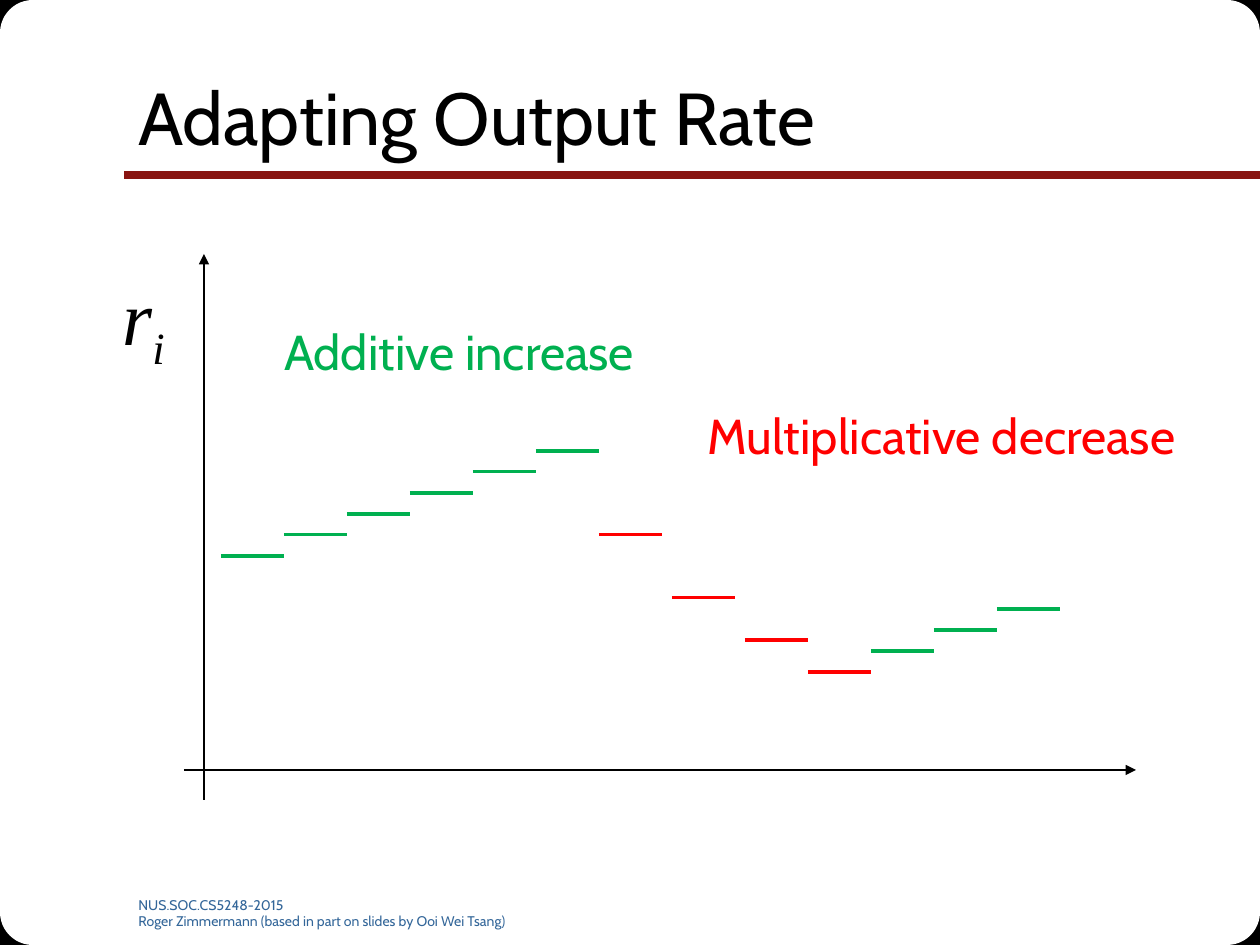
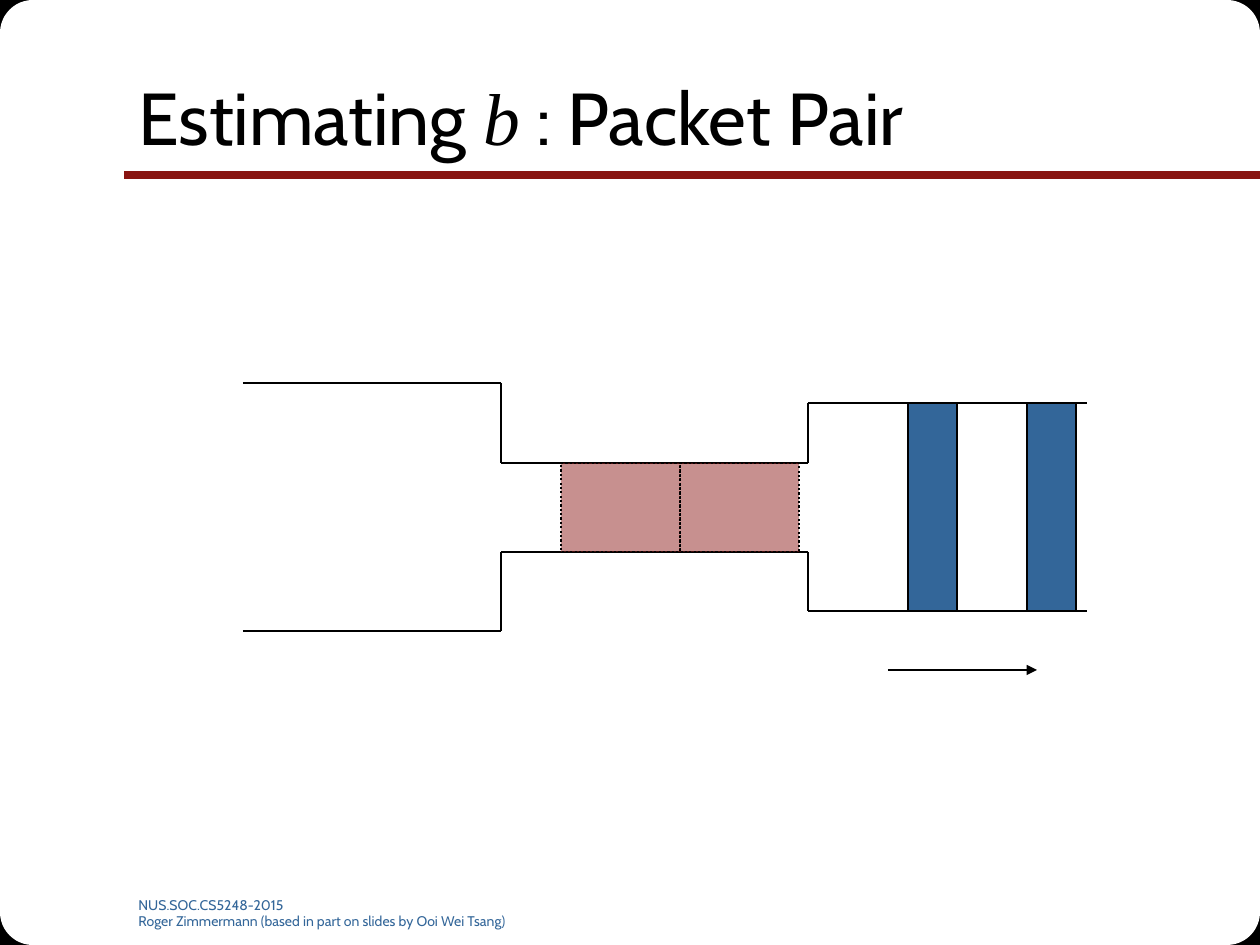
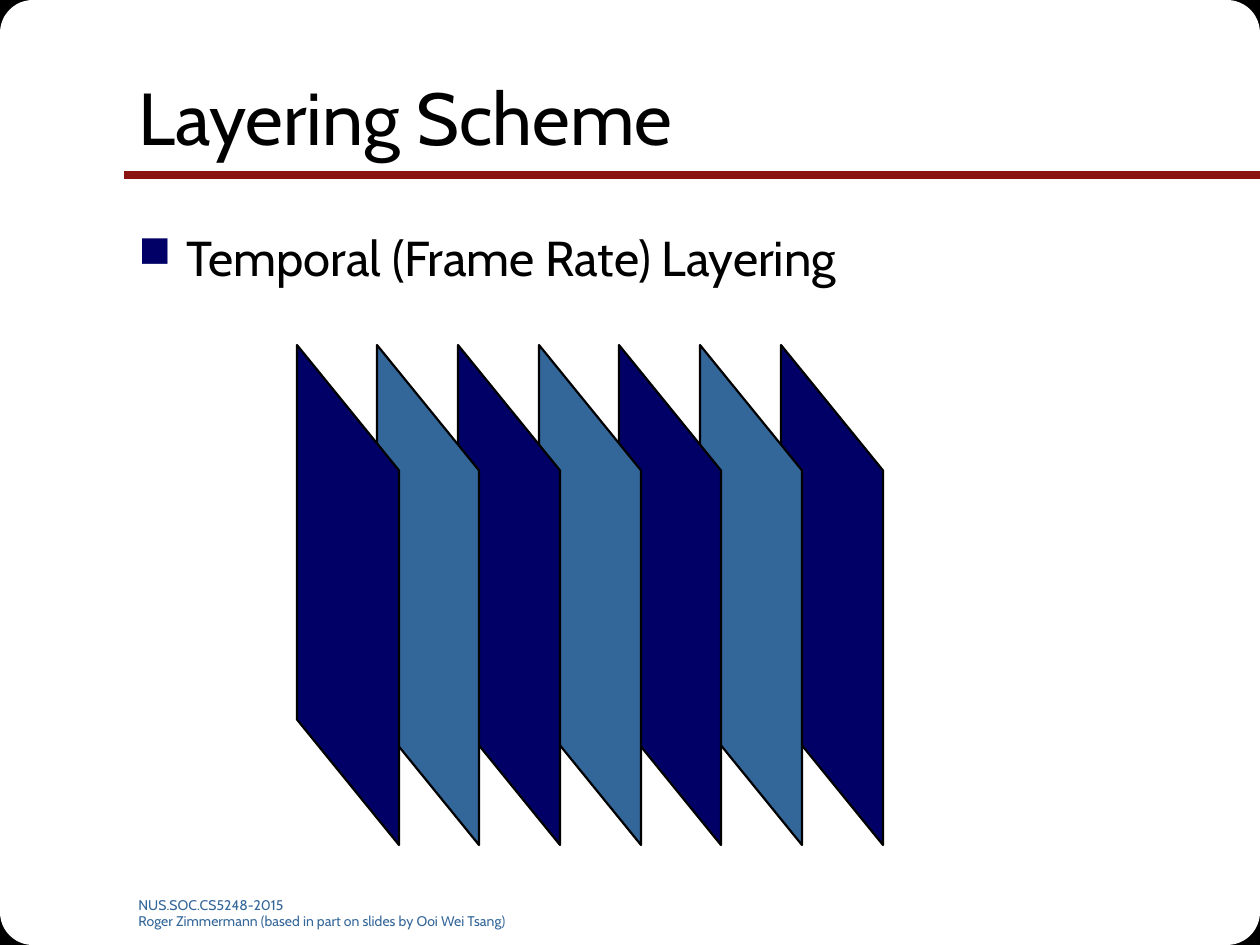
import pptx
import pptx.dml.color
import pptx.enum.dml
import pptx.enum.shapes
import pptx.enum.text
import pptx.oxml.ns
import pptx.util
from lxml import etree

SCALE = 914400 / 126  # EMU in one px
WIDE, HIGH = 1260, 945

BLACK, WHITE = "000000", "FFFFFF"
MAROON, NAVY, BLUE = "891411", "000066", "336699"
GREEN, RED = "00B050", "FF0000"
SANS, SERIF = "Cabin", "Times New Roman"
FOOT = ["NUS.SOC.CS5248-2015",
        "Roger Zimmermann (based in part on slides by Ooi Wei Tsang)"]

KIND = pptx.enum.shapes.MSO_SHAPE
ALIGN = pptx.enum.text.PP_ALIGN
ANCHOR = pptx.enum.text.MSO_ANCHOR
DOTS = pptx.enum.dml.MSO_LINE.ROUND_DOT


def px(num):
    return pptx.util.Emu(round(num * SCALE))


def color(code):
    return pptx.dml.color.RGBColor.from_string(code)


def sub(node, tag, **attrs):
    return etree.SubElement(node, pptx.oxml.ns.qn(tag), **attrs)


# Elements

def stroke(line, code, size):
    line.color.rgb = color(code)
    line.width = pptx.util.Pt(size)


def shape(slide, kind, left, top, wide, high, fill, edge=BLACK, size=1.25):
    item = slide.shapes.add_shape(kind, px(left), px(top), px(wide), px(high))
    item.shadow.inherit = False
    item.fill.solid()
    item.fill.fore_color.rgb = color(fill)
    if edge:
        stroke(item.line, edge, size)
    else:
        item.line.fill.background()
    return item


def line(slide, start, end, code=BLACK, size=1.25, arrow=False):
    item = slide.shapes.add_connector(
        pptx.enum.shapes.MSO_CONNECTOR.STRAIGHT,
        px(start[0]), px(start[1]), px(end[0]), px(end[1]))
    stroke(item.line, code, size)
    if arrow:
        sub(item.line._get_or_add_ln(), "a:tailEnd", type="triangle")
    sub(item._element.spPr, "a:effectLst")


def trace(slide, points):
    for start, end in zip(points, points[1:]):
        line(slide, start, end)


def run(para, words, size, code=BLACK, font=SANS, italic=False, base=0):
    part = para.add_run()
    part.text = words
    part.font.size = pptx.util.Pt(size)
    part.font.name = font
    part.font.italic = italic
    part.font.color.rgb = color(code)
    if base:
        part.font._element.set("baseline", str(base * 1000))


def box(slide, left, top, wide, high, wrap=True):
    frame = slide.shapes.add_textbox(
        px(left), px(top), px(wide), px(high)).text_frame
    frame.word_wrap = wrap
    return frame


def label(slide, left, top, wide, high):
    para = box(slide, left, top, wide, high, wrap=False).paragraphs[0]
    para.alignment = ALIGN.CENTER
    return para


def bullet(para, indent):
    props = para._p.get_or_add_pPr()
    props.set("marL", str(px(indent)))
    props.set("indent", str(-px(indent)))
    sub(sub(props, "a:buClr"), "a:srgbClr", val=NAVY)
    sub(props, "a:buSzPct", val="90000")
    sub(props, "a:buChar", char="■")


# Shared look: rounded black corners, rule, footer, title

def corners(slide, kind, side, fill, edge):
    for top in (0, HIGH - side):
        for left in (0, WIDE - side):
            item = shape(slide, kind, left, top, side, side, fill, edge, 0.75)
            if kind == KIND.ROUNDED_RECTANGLE:
                item.adjustments[0] = 0.17


def start(deck):
    slide = deck.slides.add_slide(deck.slide_layouts[6])
    corners(slide, KIND.RECTANGLE, 55, BLACK, BLACK)
    corners(slide, KIND.ROUNDED_RECTANGLE, 193, WHITE, None)
    line(slide, (WIDE, 175), (124, 175), MAROON, 4.5)
    foot = box(slide, 126, 890, 451, 35)
    run(foot.paragraphs[0], FOOT[0], 8, BLUE)
    run(foot.add_paragraph(), FOOT[1], 8, BLUE)
    head = box(slide, 126, 38, 1071, 157)
    head.vertical_anchor = ANCHOR.MIDDLE
    return slide, head.paragraphs[0]


# Slides

def rate(deck):
    slide, title = start(deck)
    run(title, "Adapting Output Rate", 42)

    # Axes
    line(slide, (184, 770), (1136, 770), arrow=True)
    line(slide, (204, 800), (204, 254), arrow=True)

    # Rate steps
    step, rise = 63, 21
    grow = [(221 + step * i, 556 - rise * i) for i in range(6)]
    drop = [(599, 535), (672, 598), (745, 640), (808, 672)]
    again = [(871 + step * i, 651 - rise * i) for i in range(3)]
    for group, code in ((grow, GREEN), (drop, RED), (again, GREEN)):
        for left, top in group:
            line(slide, (left, top), (left + step, top), code, 1.75)

    # Labels
    name = label(slide, 108, 262, 71, 106)
    run(name, "r", 44, font=SERIF, italic=True)
    run(name, "i", 44, font=SERIF, italic=True, base=-25)
    run(label(slide, 262, 315, 394, 72), "Additive increase", 28, GREEN)
    run(label(slide, 683, 399, 517, 72), "Multiplicative decrease", 28, RED)


def pair(deck):
    slide, title = start(deck)
    run(title, "Estimating ", 42)
    run(title, "b", 42, font=SERIF, italic=True)
    run(title, " : Packet Pair", 42)

    # Pipe walls and flow arrow
    for wide, neck, out in ((383, 463, 403), (631, 552, 611)):
        trace(slide, [(243, wide), (501, wide), (501, neck),
                      (808, neck), (808, out), (1087, out)])
    line(slide, (888, 670), (1037, 670), arrow=True)

    # Packets after and inside the neck
    for left in (1027, 908):
        shape(slide, KIND.RECTANGLE, left, 403, 49, 208, BLUE)
    for left in (680, 561):
        item = shape(slide, KIND.RECTANGLE, left, 463, 119, 89, MAROON)
        item.line.dash_style = DOTS
        tint = item._element.spPr.find(
            pptx.oxml.ns.qn("a:solidFill"))[0]
        sub(tint, "a:alpha", val="47000")


def layers(deck):
    slide, title = start(deck)
    run(title, "Layering Scheme", 42)
    para = box(slide, 126, 221, 1071, 624).paragraphs[0]
    bullet(para, 48)
    run(para, "Temporal (Frame Rate) Layering", 28)

    # Frames, rear one first
    for i in reversed(range(7)):
        item = shape(slide, KIND.PARALLELOGRAM, 98 + 242 * i // 3, 544,
                     500, 102, BLUE if i % 2 else NAVY)
        item.rotation = 90
        item.adjustments[0] = 1.23


def main():
    deck = pptx.Presentation()
    deck.slide_width, deck.slide_height = px(WIDE), px(HIGH)
    for build in (rate, pair, layers):
        build(deck)
    deck.save("out.pptx")


if __name__ == "__main__":
    main()
